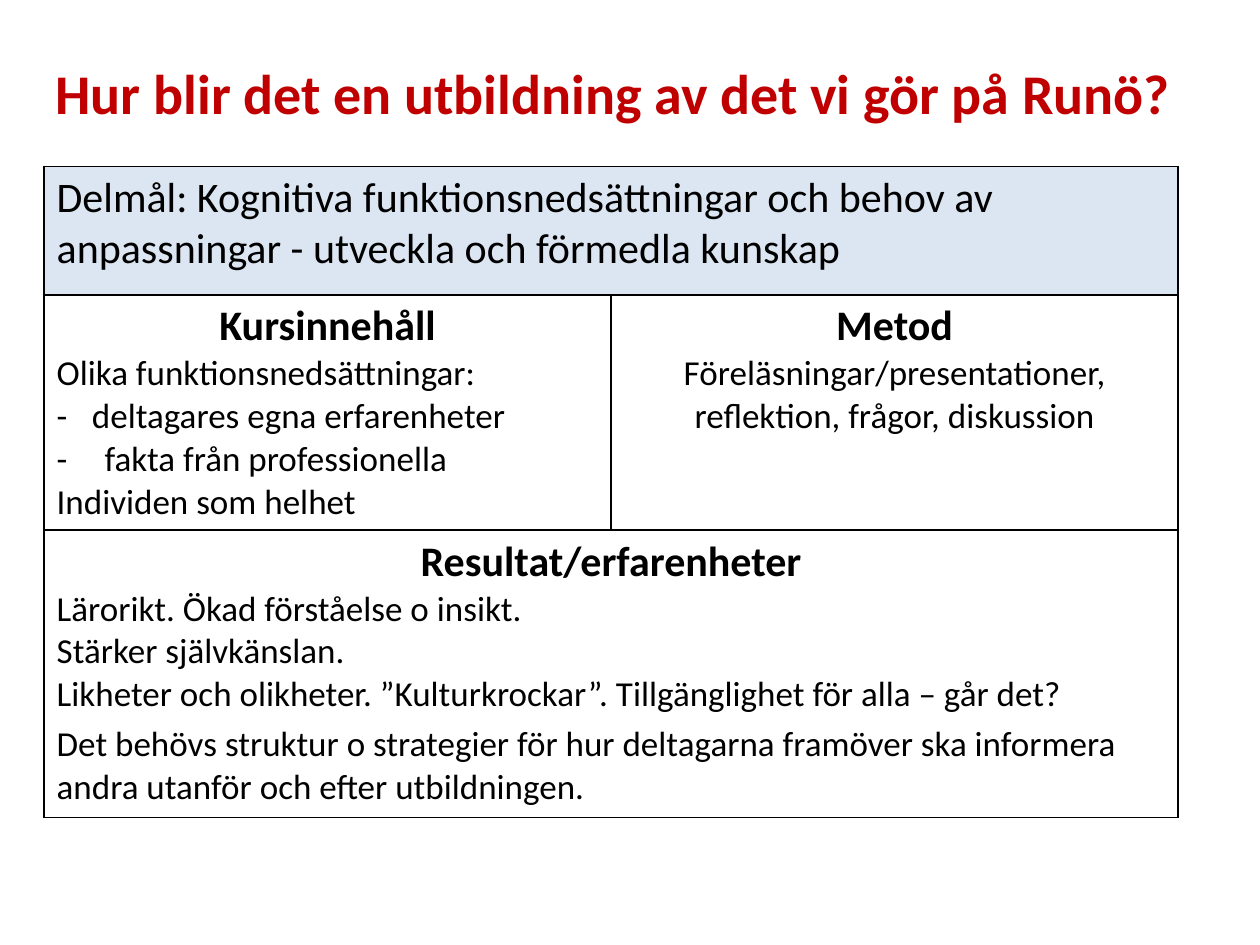
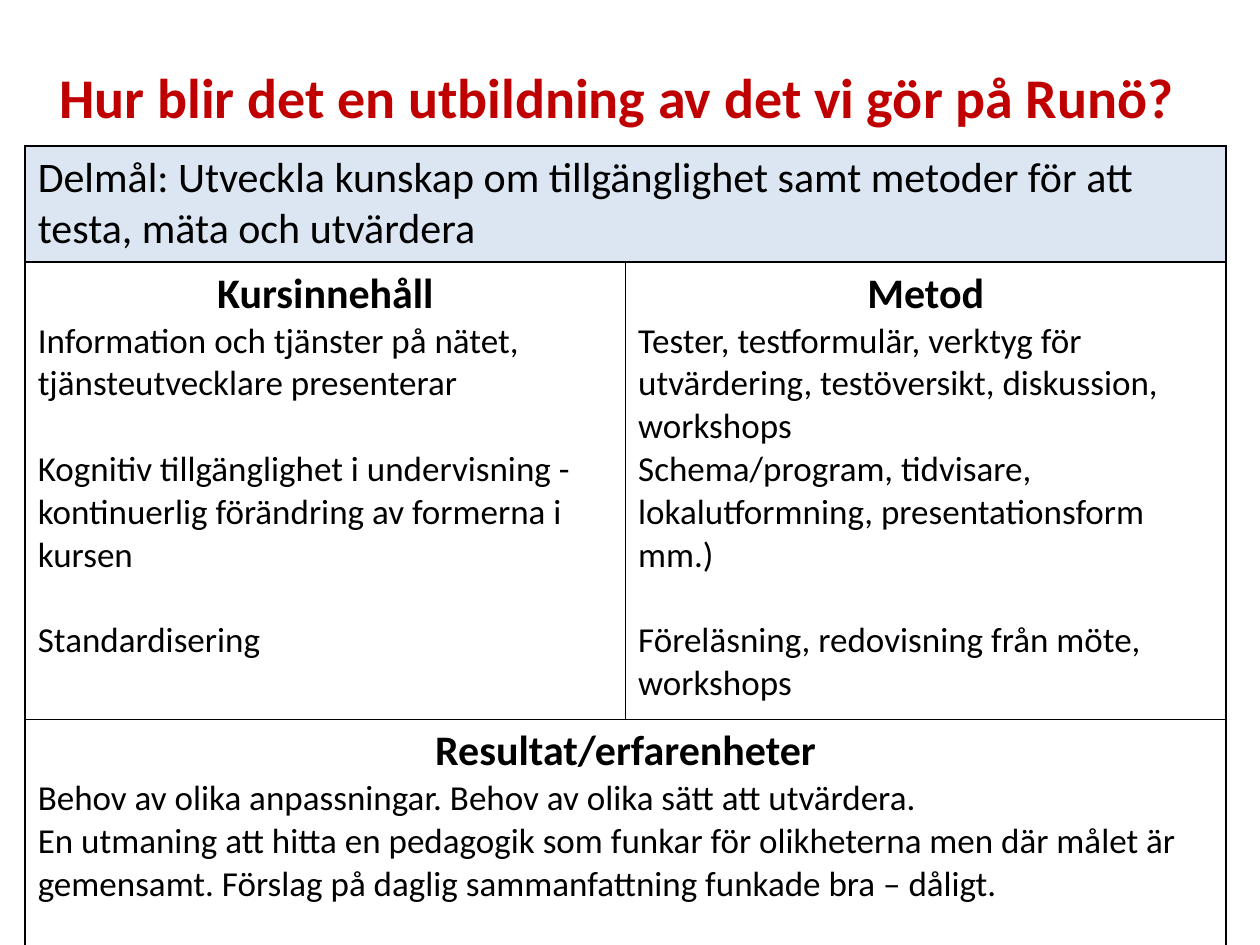
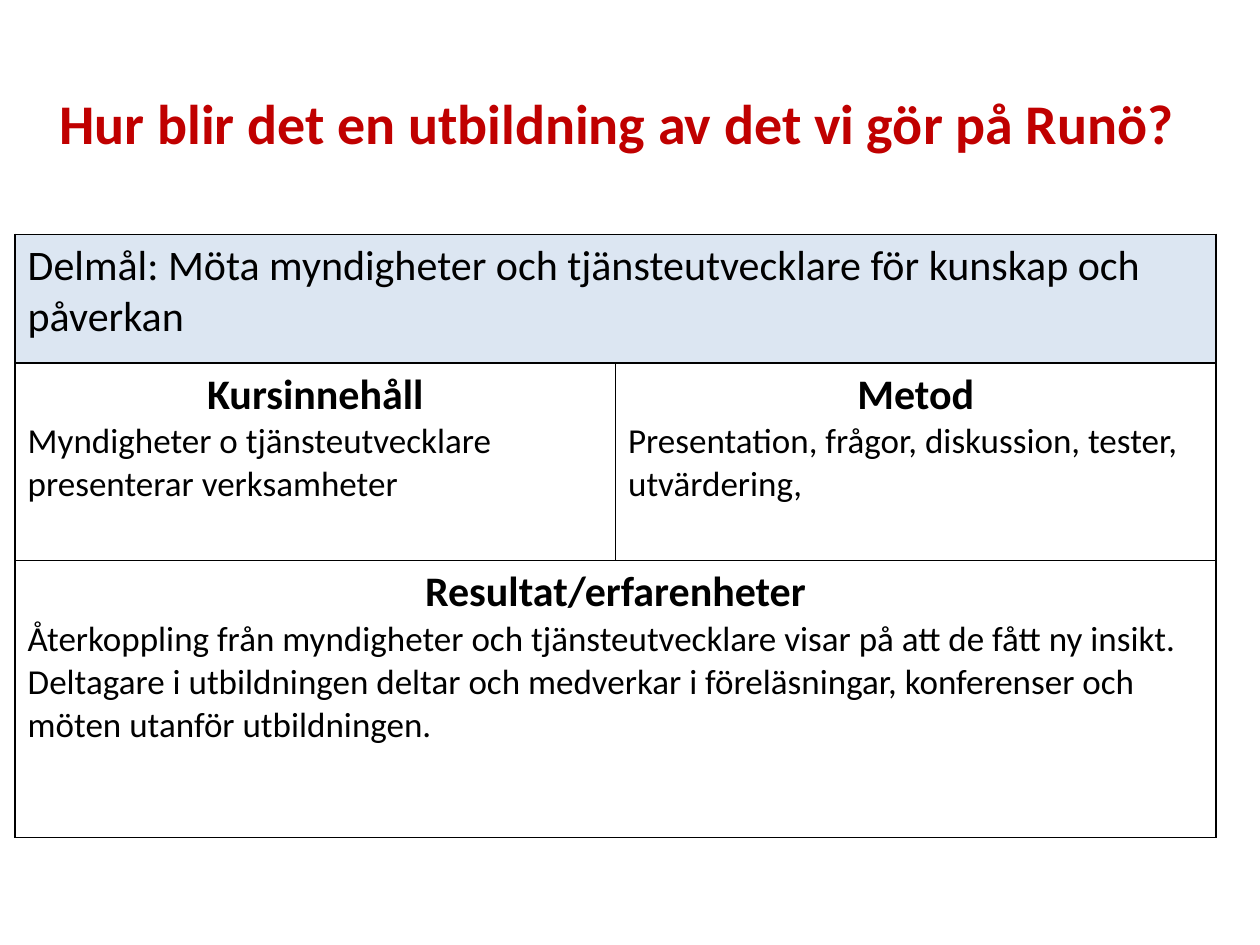
from lxml import etree
from pptx import Presentation
from pptx import util as u
from pptx.dml.color import RGBColor
from pptx.enum import text
from pptx.oxml.ns import qn

FONT = "Calibri"
RED, BLACK, PALE_BLUE = "C00000", "000000", "DCE6F2"
TITLE = "Hur blir det en utbildning av det vi gör på Runö?"
TITLE_SIZE, HEADING_SIZE, BODY_SIZE = 32, 24, 20
BLANK_LINE = 24.4
CENTER, LEFT = text.PP_ALIGN.CENTER, text.PP_ALIGN.LEFT


def color(hex_string):
    return RGBColor.from_string(hex_string)


def write(paragraph, words, size=BODY_SIZE, bold=False, fill=BLACK,
          align=LEFT, before=0, dash_indent=0):
    """Fill a paragraph; dash_indent in inches makes it a dashed list item."""
    paragraph.alignment = align
    paragraph.space_before = u.Pt(before)
    run = paragraph.add_run()
    run.text = words
    run.font.name, run.font.size, run.font.bold = FONT, u.Pt(size), bold
    run.font.color.rgb = color(fill)
    if dash_indent:
        properties = paragraph._p.get_or_add_pPr()
        properties.set("marL", str(u.Inches(dash_indent)))
        properties.set("indent", str(-u.Inches(dash_indent)))
        etree.SubElement(properties, qn("a:buFont"), typeface=FONT)
        etree.SubElement(properties, qn("a:buChar"), char="-")


# Content: boxes and row heights are percentages of the slide's width and height
pages = [
    {
        "title_box": (-0.3, 0.27, 98, 18.93),
        "table_box": (3.5, 17.6, 90),
        "rows": (13.6, 24.8, 30.4),
        "goal": "Delmål: Kognitiva funktionsnedsättningar och behov av "
                "anpassningar - utveckla och förmedla kunskap",
        "content": [
            ("Olika funktionsnedsättningar:", {}),
            ("deltagares egna erfarenheter", {"dash_indent": 0.28}),
            ("fakta från professionella", {"dash_indent": 0.38}),
            ("Individen som helhet", {}),
        ],
        "method": [
            ("Föreläsningar/presentationer, reflektion, frågor, diskussion",
             {"align": CENTER}),
        ],
        "results": [
            ("Lärorikt. Ökad förståelse o insikt.", {}),
            ("Stärker självkänslan.", {}),
            ("Likheter och olikheter. ”Kulturkrockar”. "
             "Tillgänglighet för alla – går det?", {}),
            ("Det behövs struktur o strategier för hur deltagarna framöver ska "
             "informera andra utanför och efter utbildningen.", {"before": 4}),
        ],
    },
    {
        "title_box": (0, 2.8, 98, 14.67),
        "table_box": (2, 15.47, 95.3),
        "rows": (12.27, 48.4, 25.07),
        "goal": "Delmål: Utveckla kunskap om tillgänglighet samt metoder för "
                "att testa, mäta och utvärdera",
        "content": [
            ("Information och tjänster på nätet, "
             "tjänsteutvecklare presenterar", {}),
            ("Kognitiv tillgänglighet i undervisning -", {"before": BLANK_LINE}),
            ("kontinuerlig förändring av formerna i kursen", {}),
            ("Standardisering", {"before": BLANK_LINE}),
        ],
        "method": [
            ("Tester, testformulär, verktyg för utvärdering, testöversikt, "
             "diskussion, workshops", {}),
            ("Schema/program, tidvisare, lokalutformning, "
             "presentationsform mm.)", {}),
            ("Föreläsning, redovisning från möte, workshops",
             {"before": BLANK_LINE}),
        ],
        "results": [
            ("Behov av olika anpassningar. Behov av olika sätt att utvärdera.", {}),
            ("En utmaning att hitta en pedagogik som funkar för olikheterna men "
             "där målet är gemensamt. Förslag på daglig sammanfattning funkade "
             "bra – dåligt.", {}),
        ],
    },
    {
        "title_box": (0, 3.87, 98, 18.13),
        "table_box": (1.2, 24.8, 95.3),
        "rows": (13.6, 20.93, 29.33),
        "goal": "Delmål: Möta myndigheter och tjänsteutvecklare för kunskap och "
                "påverkan",
        "content": [
            ("Myndigheter o tjänsteutvecklare presenterar verksamheter", {}),
        ],
        "method": [
            ("Presentation, frågor, diskussion, tester, utvärdering,", {}),
        ],
        "results": [
            ("Återkoppling från myndigheter och tjänsteutvecklare visar på att "
             "de fått ny insikt.", {}),
            ("Deltagare i utbildningen deltar och medverkar i föreläsningar, "
             "konferenser och möten utanför utbildningen.", {}),
        ],
    },
]

presentation = Presentation()
presentation.slide_width, presentation.slide_height = u.Inches(10), u.Inches(7.5)
x_unit = presentation.slide_width / 100
y_unit = presentation.slide_height / 100
title_only = presentation.slide_layouts[5]

for page in pages:
    slide = presentation.slides.add_slide(title_only)

    # Title
    title = slide.shapes.title
    left, top, width, height = page["title_box"]
    title.left, title.width = int(left * x_unit), int(width * x_unit)
    title.top, title.height = int(top * y_unit), int(height * y_unit)
    title.text_frame.auto_size = text.MSO_AUTO_SIZE.NONE
    title.text_frame.vertical_anchor = text.MSO_ANCHOR.MIDDLE
    write(title.text_frame.paragraphs[0], TITLE, size=TITLE_SIZE, bold=True,
          fill=RED, align=CENTER)

    # Table grid: full-width goal, two columns, full-width results
    left, top, width = page["table_box"]
    table = slide.shapes.add_table(
        3, 2, int(left * x_unit), int(top * y_unit),
        int(width * x_unit), int(sum(page["rows"]) * y_unit)).table
    table.first_row = table.horz_banding = False
    for row, height in zip(table.rows, page["rows"]):
        row.height = int(height * y_unit)
    for row_index in (0, 2):
        table.cell(row_index, 0).merge(table.cell(row_index, 1))

    # Thin black borders, no fill except the goal row
    for cell in table.iter_cells():
        properties = cell._tc.get_or_add_tcPr()
        for side in ("a:lnL", "a:lnR", "a:lnT", "a:lnB"):
            line = etree.SubElement(properties, qn(side), w=str(u.Pt(1)))
            line_fill = etree.SubElement(line, qn("a:solidFill"))
            etree.SubElement(line_fill, qn("a:srgbClr"), val=BLACK)
        cell.fill.background()
    for cell in table.rows[0].cells:
        cell.fill.solid()
        cell.fill.fore_color.rgb = color(PALE_BLUE)

    # Table text
    write(table.cell(0, 0).text_frame.paragraphs[0], page["goal"],
          size=HEADING_SIZE)
    sections = [
        (table.cell(1, 0), "Kursinnehåll", page["content"]),
        (table.cell(1, 1), "Metod", page["method"]),
        (table.cell(2, 0), "Resultat/erfarenheter", page["results"]),
    ]
    for cell, heading, lines in sections:
        frame = cell.text_frame
        write(frame.paragraphs[0], heading, size=HEADING_SIZE, bold=True,
              align=CENTER)
        for words, options in lines:
            write(frame.add_paragraph(), words, **options)

presentation.save("out.pptx")
